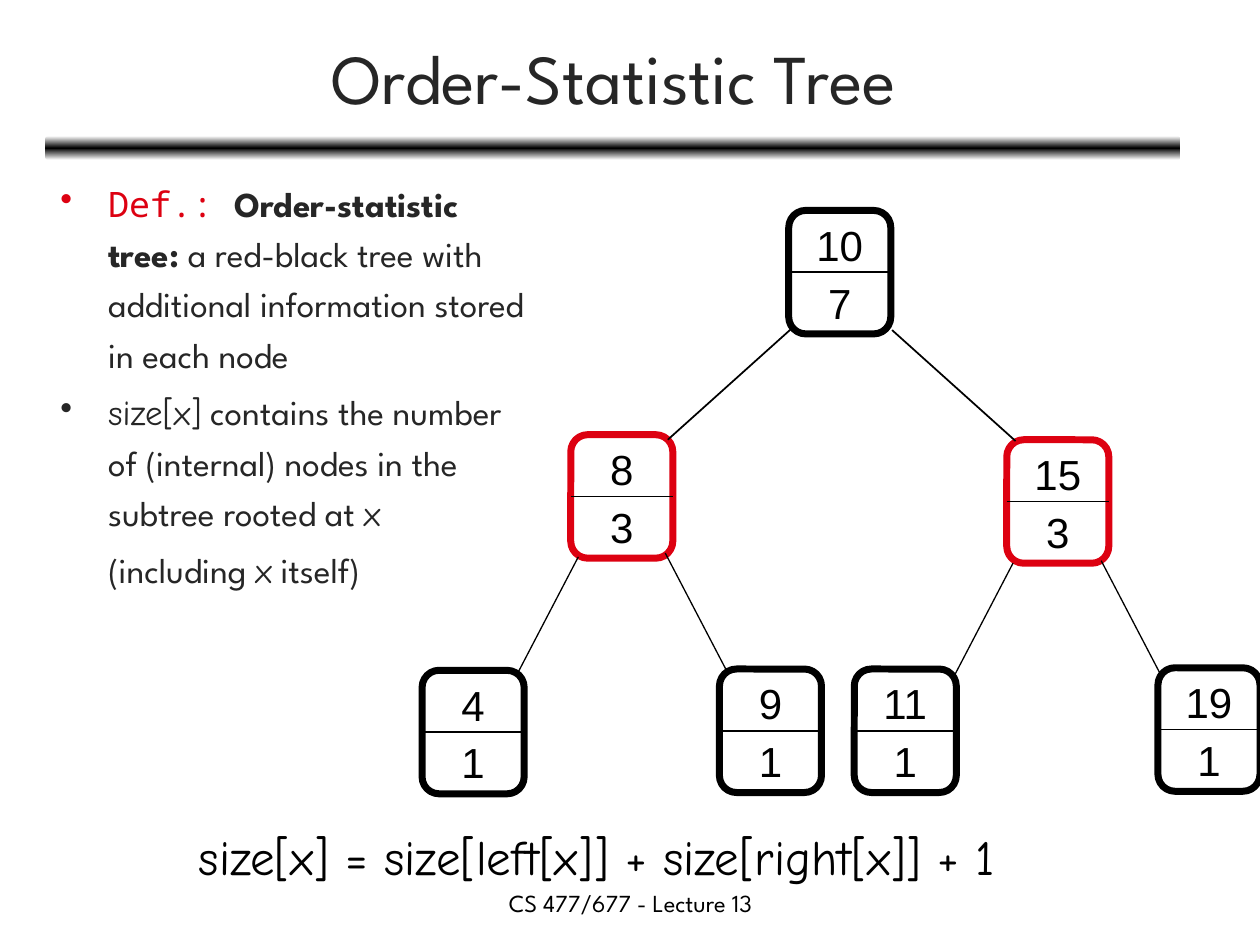
from copy import deepcopy
from pptx import Presentation
from pptx.dml.color import RGBColor
from pptx.enum.shapes import MSO_CONNECTOR as Link, MSO_SHAPE as Shape
from pptx.enum.text import MSO_ANCHOR as Anchor, PP_ALIGN as Align
from pptx.oxml.ns import qn
from pptx.oxml.xmlchemy import OxmlElement as Node
from pptx.util import Pt

PX = 9144
BLACK = RGBColor(0, 0, 0)
WHITE = RGBColor(255, 255, 255)
DARK = RGBColor(0x26, 0x26, 0x26)
RED = RGBColor(0xDD, 0x01, 0x11)
SANS, HAND, MONO = "League Spartan", "Comic Neue", "Noto Sans Mono"

NODES = [
    (626, 167, "10", "7", BLACK), (453, 345, "8", "3", RED),
    (799, 349, "15", "3", RED), (335, 532, "4", "1", BLACK),
    (571, 531, "9", "1", BLACK), (678, 531, "11", "1", BLACK),
    (919, 530, "19", "1", BLACK),
]
EDGES = [
    (628, 261, 530, 349, 1), (708, 262, 806, 350, 1),
    (459, 442, 411, 534, 0.75), (528, 439, 576, 531, 0.75),
    (804, 447, 756, 539, 0.75), (874, 445, 922, 537, 0.75),
]
POINTS = [
    ("•", [("Def.: ", MONO, RED, False),
           ("Order-statistic tree:", SANS, DARK, True),
           (" a red-black tree with additional information stored in each node",
            SANS, DARK, False)]),
    ("•", [("size[x]", HAND, DARK, False),
           (" contains the number of (internal) nodes in the subtree rooted at ",
            SANS, DARK, False),
           ("x", HAND, DARK, False)]),
    (None, [("(including ", SANS, DARK, False), ("x", HAND, DARK, False),
            (" itself)", SANS, DARK, False)]),
]


def scale(*box):
    """Turn px lengths into EMU."""
    return [n * PX for n in box]


def add_run(para, text, size, font, color, bold=False):
    """Add one styled run to a paragraph."""
    run = para.add_run()
    run.text = text
    run.font.size, run.font.name, run.font.bold = Pt(size), font, bold
    run.font.color.rgb = color


def add_frame(shapes, box):
    """Add a wrapping text box and return its frame."""
    frame = shapes.add_textbox(*scale(*box)).text_frame
    frame.word_wrap = True
    return frame


def add_label(shapes, box, text, size, font, color=BLACK, align=Align.CENTER):
    """Add a one-line label and return its frame."""
    frame = add_frame(shapes, box)
    para = frame.paragraphs[0]
    para.alignment = align
    add_run(para, text, size, font, color)
    return frame


def add_line(shapes, ends, width):
    """Add a plain black straight line."""
    line = shapes.add_connector(Link.STRAIGHT, *scale(*ends))
    line.line.color.rgb, line.line.width = BLACK, Pt(width)
    line._element.spPr.append(Node("a:effectLst"))
    return line


def add_head(shapes, box):
    """Add the title and the shaded bar under it."""
    x, y, w, h = box
    frame = add_label(shapes, box, "Order-Statistic Tree", 40, SANS, DARK)
    frame.vertical_anchor = Anchor.MIDDLE
    bar = shapes.add_shape(Shape.ROUNDED_RECTANGLE,
                           *scale(x - 1, y + h - 2, w + 1, 19))
    bar.shadow.inherit = False
    bar.line.fill.background()
    bar.fill.gradient()
    bar.fill.gradient_angle = 90
    stops = bar._element.spPr.find(".//" + qn("a:gsLst"))
    stops.append(deepcopy(stops[0]))
    tones = zip(bar.fill.gradient_stops, (0, 0.5, 1), (WHITE, BLACK, WHITE))
    for stop, pos, color in tones:
        stop.position, stop.color.rgb = pos, color


def add_points(shapes, box):
    """Add the bulleted definitions."""
    frame = add_frame(shapes, box)
    for i, (mark, runs) in enumerate(POINTS):
        para = frame.add_paragraph() if i else frame.paragraphs[0]
        para.line_spacing, para.space_before = 1.2, Pt(4)
        props = para._p.get_or_add_pPr()
        props.set("marL", str(38 * PX))
        props.set("indent", str(-38 * PX if mark else 0))
        if mark:
            bullet = Node("a:buChar")
            bullet.set("char", mark)
            props.append(bullet)
        for text, font, color, bold in runs:
            add_run(para, text, 20, font, color, bold)


def add_node(shapes, x, y, key, size, color):
    """Add a tree node: key above, subtree size below."""
    w, h = 81, 98
    parts = shapes.add_group_shape().shapes
    rect = parts.add_shape(Shape.ROUNDED_RECTANGLE, *scale(x, y, w, h))
    rect.shadow.inherit = False
    rect.fill.background()
    rect.line.color.rgb, rect.line.width = color, Pt(4)
    add_label(parts, (x, y + 2, w, 50), key, 24, "Arial")
    add_label(parts, (x, y + 48, w, 50), size, 24, "Arial")
    mid = y + h // 2
    line = add_line(parts, (x, mid, x + w, mid), 1)
    line.begin_connect(rect, 1)
    line.end_connect(rect, 3)


def add_tree(shapes):
    """Add all nodes and the edges between them."""
    for node in NODES:
        add_node(shapes, *node)
    for *ends, width in EDGES:
        add_line(shapes, ends, width)


def add_foot(shapes, box):
    """Add the size formula and the lecture line below it."""
    x, y, w, h = box
    frame = add_label(shapes, (x, y, w, h),
                      "size[x] = size[left[x]] + size[right[x]] + 1",
                      28, HAND, align=Align.LEFT)
    para = frame.paragraphs[0]
    para.line_spacing, para.space_before = 1.2, Pt(6)
    add_label(shapes, (x + 194, y + 58, 317, 35),
              "CS 477/677 - Lecture 13", 14, SANS)


def main():
    """Build and save the slide."""
    deck = Presentation()
    deck.slide_width, deck.slide_height = scale(1000, 750)
    shapes = deck.slides.add_slide(deck.slide_layouts[6]).shapes
    add_head(shapes, (37, 11, 900, 99))
    add_points(shapes, (38, 133, 391, 555))
    add_foot(shapes, (148, 642, 757, 66))
    add_tree(shapes)
    deck.save("out.pptx")


if __name__ == "__main__":
    main()
